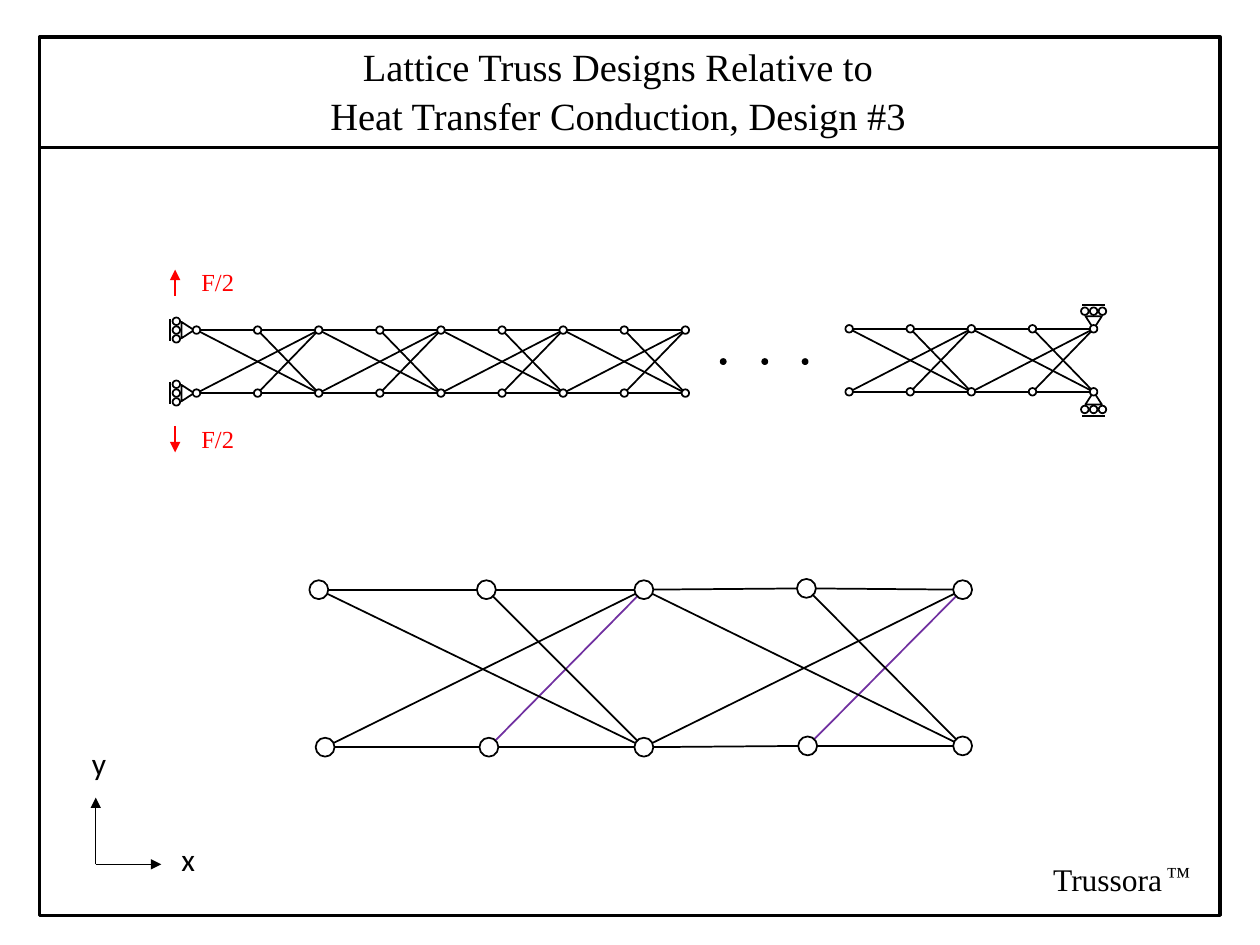
from dataclasses import dataclass

from lxml import etree
from pptx import Presentation
from pptx.dml.color import RGBColor
from pptx.enum.shapes import MSO_CONNECTOR, MSO_SHAPE
from pptx.enum.text import MSO_ANCHOR, PP_ALIGN
from pptx.oxml.ns import qn
from pptx.util import Cm, Pt

STRAIGHT = MSO_CONNECTOR.STRAIGHT
CIRCLE = MSO_SHAPE.OVAL
TRIANGLE = MSO_SHAPE.ISOSCELES_TRIANGLE
RECTANGLE = MSO_SHAPE.RECTANGLE
LEFT, CENTER = PP_ALIGN.LEFT, PP_ALIGN.CENTER
TOP = MSO_ANCHOR.TOP

BLACK, WHITE, RED, PURPLE = "000000", "FFFFFF", "FF0000", "7030A0"
SERIF, SANS = "Times New Roman", "Calibri"

Point = tuple[float, float]


@dataclass
class Truss:
    top: list[Point]
    bottom: list[Point]
    node_size: float
    brace_color: str = BLACK


@dataclass
class Support:
    node: Point
    direction: tuple[int, int]  # from the node towards the wall
    rotation: int
    reach: float  # from the node to the rollers


def length(inches: float) -> Cm:
    return Cm(inches * 2.54)


def color(value: str) -> RGBColor:
    return RGBColor.from_string(value)


def add_line(slide, start: Point, end: Point, line_color: str = BLACK,
             width: float = 1, arrow: bool = False) -> None:
    connector = slide.shapes.add_connector(
        STRAIGHT, *(length(value) for value in (*start, *end)))
    connector.line.color.rgb = color(line_color)
    connector.line.width = Pt(width)
    if arrow:
        outline = connector.line._get_or_add_ln()
        etree.SubElement(outline, qn("a:tailEnd"), type="triangle")
    etree.SubElement(connector._element.spPr, qn("a:effectLst"))


def add_shape(slide, kind, center: Point, width: float, height: float,
              fill: str | None = WHITE, line_width: float = 1, rotation: int = 0) -> None:
    shape = slide.shapes.add_shape(
        kind, length(center[0] - width / 2), length(center[1] - height / 2),
        length(width), length(height))
    shape.shadow.inherit = False
    shape.rotation = rotation
    if fill is None:
        shape.fill.background()
    else:
        shape.fill.solid()
        shape.fill.fore_color.rgb = color(fill)
    shape.line.color.rgb = color(BLACK)
    shape.line.width = Pt(line_width)


def add_text(slide, text: str, left: float, top: float, width: float, height: float, *,
             size: float, font: str = SERIF, text_color: str = BLACK,
             align=LEFT, space_before: float = 0) -> None:
    box = slide.shapes.add_textbox(*(length(v) for v in (left, top, width, height)))
    frame = box.text_frame
    frame.word_wrap = True
    frame.vertical_anchor = TOP
    for index, line in enumerate(text.split("\n")):
        paragraph = frame.add_paragraph() if index else frame.paragraphs[0]
        paragraph.alignment = align
        paragraph.space_before = Pt(space_before if index else 0)
        run = paragraph.add_run()
        run.text = line
        run.font.size = Pt(size)
        run.font.name = font
        run.font.color.rgb = color(text_color)


def regular_truss(left: float, top: float, panels: int) -> Truss:
    """Truss with equal panels and small nodes."""
    columns = [left + 0.485 * index for index in range(panels + 1)]
    return Truss([(x, top) for x in columns], [(x, top + 0.5) for x in columns], 0.06)


def draw_truss(slide, truss: Truss) -> None:
    top, bottom = truss.top, truss.bottom
    # Each bay covers two panels
    for first in range(0, len(top) - 2, 2):
        middle, last = first + 1, first + 2
        add_line(slide, bottom[middle], top[last], truss.brace_color)
        add_line(slide, top[middle], bottom[last])
        add_line(slide, top[first], bottom[last])
        add_line(slide, bottom[first], top[last])
        for chord in (top, bottom):
            add_line(slide, chord[first], chord[middle])
            add_line(slide, chord[middle], chord[last])
    for node in top + bottom:
        add_shape(slide, CIRCLE, node, truss.node_size, truss.node_size)


def draw_support(slide, support: Support) -> None:
    (x, y), (dx, dy) = support.node, support.direction

    def place(outward: float, sideways: float = 0) -> Point:
        return x + dx * outward + abs(dy) * sideways, y + dy * outward + abs(dx) * sideways

    add_shape(slide, TRIANGLE, place(support.reach - 0.09), 0.13, 0.1,
              fill=None, rotation=support.rotation)
    for offset in (-0.07, 0, 0.07):
        add_shape(slide, CIRCLE, place(support.reach, offset), 0.06, 0.06)
    wall = support.reach + 0.05
    add_line(slide, place(wall, -0.09), place(wall, 0.09))


def main() -> None:
    presentation = Presentation()
    presentation.slide_width, presentation.slide_height = length(10), length(7.5)
    slide = presentation.slides.add_slide(presentation.slide_layouts[6])

    # Frame and title
    add_shape(slide, RECTANGLE, (5, 3.78), 9.37, 6.97, fill=None, line_width=2)
    add_line(slide, (0.31, 1.17), (9.68, 1.17), width=2)
    add_text(slide, "Lattice Truss Designs Relative to\nHeat Transfer Conduction, Design #3",
             2.42, 0.29, 4.97, 0.85, size=22, align=CENTER, space_before=1.5)

    # Axes
    origin = (0.76, 6.86)
    add_line(slide, origin, (1.28, 6.86), width=0.5, arrow=True)
    add_line(slide, origin, (0.76, 6.33), width=0.5, arrow=True)
    add_text(slide, "x", 1.34, 6.62, 0.31, 0.4, size=18, font=SANS)
    add_text(slide, "y", 0.63, 5.86, 0.31, 0.4, size=18, font=SANS)

    # Forces
    for start, end, label_top in ((2.35, 2.14, 2.07), (3.38, 3.59, 3.32)):
        add_line(slide, (1.39, start), (1.39, end), RED, arrow=True)
        add_text(slide, "F/2", 1.5, label_top, 0.5, 0.34, size=14, text_color=RED)

    # Long truss with its supports, shortened in the middle
    left_part = regular_truss(1.56, 2.62, 8)
    right_part = regular_truss(6.74, 2.61, 4)
    supports = [
        Support(left_part.top[0], (-1, 0), 90, 0.16),
        Support(left_part.bottom[0], (-1, 0), 90, 0.16),
        Support(right_part.top[-1], (0, -1), 180, 0.14),
        Support(right_part.bottom[-1], (0, 1), 0, 0.14),
    ]
    for support in supports:
        draw_support(slide, support)
    for part in (left_part, right_part):
        draw_truss(slide, part)
    for x in (5.74, 6.07, 6.39):
        add_shape(slide, CIRCLE, (x, 2.87), 0.04, 0.04, fill=BLACK)

    # Enlarged bays
    draw_truss(slide, Truss(
        [(2.53, 4.68), (3.86, 4.68), (5.11, 4.68), (6.4, 4.67), (7.64, 4.68)],
        [(2.58, 5.93), (3.88, 5.93), (5.11, 5.93), (6.41, 5.92), (7.64, 5.92)],
        0.15, PURPLE))

    # Name
    add_text(slide, "Trussora", 8.26, 6.78, 1.09, 0.4, size=18)
    add_text(slide, "™", 9.16, 6.78, 0.57, 0.34, size=14)

    presentation.save("out.pptx")


if __name__ == "__main__":
    main()
